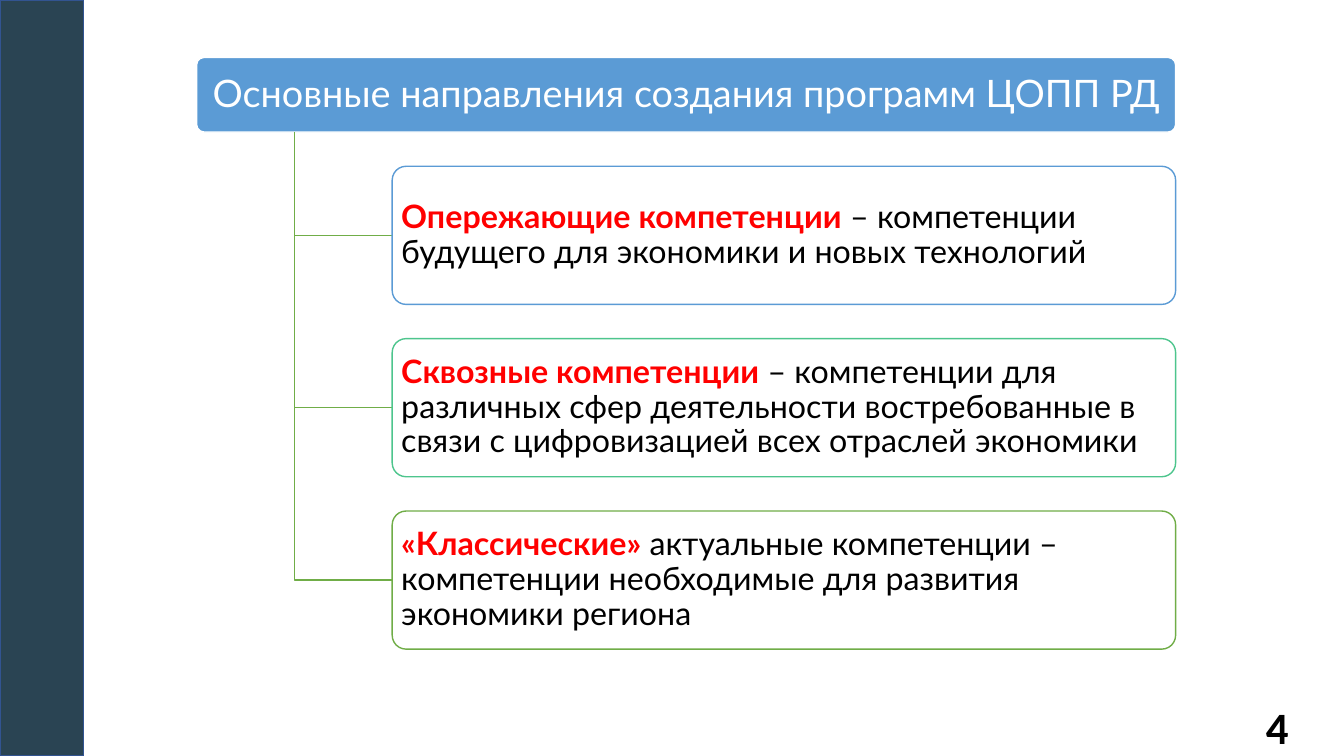
"""Build the slide on the main directions for creating training programmes."""
from dataclasses import dataclass

from lxml.etree import SubElement
from pptx import Presentation
from pptx.dml.color import RGBColor
from pptx.enum.shapes import MSO_SHAPE as Preset
from pptx.enum.text import MSO_ANCHOR as Anchor, MSO_AUTO_SIZE as AutoSize, PP_ALIGN as Align
from pptx.oxml.ns import qn
from pptx.shapes.autoshape import Shape
from pptx.slide import Slide
from pptx.text.text import TextFrame, _Paragraph as Paragraph
from pptx.util import Inches, Pt


@dataclass(frozen=True)
class Theme:
    """Colours, fonts and type sizes of the slide."""
    sidebar: str = "2A4453"
    sidebar_line: str = "325491"
    header: str = "5B9BD5"
    branch: str = "70AD47"
    accent: str = "FF0000"
    dark: str = "000000"
    light: str = "FFFFFF"
    font: str = "Lato"
    number_font: str = "Calibri"
    header_size: int = 27
    card_size: int = 23
    number_size: int = 32
    line_width: int = 1
    corner: float = 0.1
    spacing: float = 0.9


@dataclass(frozen=True)
class Box:
    """Place and size in inches."""
    left: float
    top: float
    width: float
    height: float


@dataclass(frozen=True)
class Card:
    """One direction: its highlighted term, explanation and outline colour."""
    term: str
    meaning: str
    outline: str


THEME = Theme()
HEADER = Box(1.95, 0.57, 9.71, 0.74)
FIRST_CARD = Box(3.89, 1.65, 7.77, 1.37)
CARD_STEP = 1.71
TRUNK_LEFT = 2.92
CARDS = (
    Card("Опережающие компетенции ",
         "– компетенции будущего для экономики и новых технологий", "5B9BD5"),
    Card("Сквозные компетенции ",
         "– компетенции для различных сфер деятельности востребованные "
         "в связи с цифровизацией всех отраслей экономики", "4DC58D"),
    Card("«Классические» ",
         "актуальные компетенции – компетенции необходимые для развития "
         "экономики региона", "70AD47"),
)


def add_panel(slide: Slide, preset: Preset, box: Box, fill: str, line: str) -> Shape:
    """Add a filled and outlined preset shape."""
    panel = slide.shapes.add_shape(
        preset, Inches(box.left), Inches(box.top), Inches(box.width), Inches(box.height))
    panel.shadow.inherit = False
    panel.fill.solid()
    panel.fill.fore_color.rgb = RGBColor.from_string(fill)
    panel.line.color.rgb = RGBColor.from_string(line)
    panel.line.width = Pt(THEME.line_width)
    if preset == Preset.ROUNDED_RECTANGLE:
        panel.adjustments[0] = THEME.corner
    return panel


def set_frame(frame: TextFrame, side: float, edge: float, align: Align) -> Paragraph:
    """Format a text frame and return its first paragraph."""
    frame.word_wrap = True
    frame.auto_size = AutoSize.NONE
    frame.vertical_anchor = Anchor.MIDDLE
    frame.margin_left = frame.margin_right = Inches(side)
    frame.margin_top = frame.margin_bottom = Inches(edge)
    para = frame.paragraphs[0]
    para.alignment = align
    return para


def add_span(para: Paragraph, text: str, size: int, color: str,
             bold: bool = False, font: str = THEME.font) -> None:
    """Add one formatted run."""
    span = para.add_run()
    span.text = text
    span.font.name = font
    span.font.size = Pt(size)
    span.font.bold = bold
    span.font.color.rgb = RGBColor.from_string(color)


def add_header(slide: Slide) -> None:
    """Add the header bar with the title placeholder over it."""
    add_panel(slide, Preset.ROUNDED_RECTANGLE, HEADER, THEME.header, THEME.light)
    title = slide.shapes.title
    title.left, title.top = Inches(HEADER.left + 0.02), Inches(HEADER.top + 0.02)
    title.width, title.height = Inches(HEADER.width - 0.04), Inches(HEADER.height - 0.04)
    slide.shapes.element.append(title.element)
    para = set_frame(title.text_frame, 0.06, 0.04, Align.CENTER)
    para.line_spacing = THEME.spacing
    add_span(para, "Основные направления создания программ ЦОПП РД",
             THEME.header_size, THEME.light)


def add_branch(slide: Slide, box: Box) -> None:
    """Draw the elbow from the header to the left side of a card."""
    trunk, middle = Inches(TRUNK_LEFT), Inches(box.top + box.height / 2)
    builder = slide.shapes.build_freeform(trunk, Inches(HEADER.top + HEADER.height))
    builder.add_line_segments([(trunk, middle), (Inches(box.left), middle)], close=False)
    branch = builder.convert_to_shape()
    branch.shadow.inherit = False
    branch.fill.background()
    branch.line.color.rgb = RGBColor.from_string(THEME.branch)
    branch.line.width = Pt(THEME.line_width)


def add_card(slide: Slide, card: Card, box: Box) -> None:
    """Add a card with its term and explanation."""
    panel = add_panel(slide, Preset.ROUNDED_RECTANGLE, box, THEME.light, card.outline)
    color = panel.element.spPr.find(qn("a:solidFill"))[0]
    SubElement(color, qn("a:alpha"), val="90000")
    para = set_frame(panel.text_frame, 0.05, 0.03, Align.LEFT)
    para.line_spacing = THEME.spacing
    add_span(para, card.term, THEME.card_size, THEME.accent, bold=True)
    add_span(para, card.meaning, THEME.card_size, THEME.dark)


def add_page_number(slide: Slide) -> None:
    """Add the page number in the lower right corner."""
    number = slide.shapes.add_textbox(Inches(10.08), Inches(6.91), Inches(3), Inches(0.59))
    para = set_frame(number.text_frame, 0.3, 0.05, Align.RIGHT)
    add_span(para, "4", THEME.number_size, THEME.dark, bold=True, font=THEME.number_font)


def main() -> None:
    """Build and save the deck."""
    deck = Presentation()
    deck.slide_width, deck.slide_height = Inches(13.33), Inches(7.5)
    page = deck.slides.add_slide(deck.slide_layouts.get_by_name("Title Only"))
    add_panel(page, Preset.RECTANGLE, Box(0, 0, 0.83, 7.5), THEME.sidebar, THEME.sidebar_line)
    add_header(page)
    for index, card in enumerate(CARDS):
        box = Box(FIRST_CARD.left, FIRST_CARD.top + index * CARD_STEP,
                  FIRST_CARD.width, FIRST_CARD.height)
        add_branch(page, box)
        add_card(page, card, box)
    add_page_number(page)
    deck.save("out.pptx")


if __name__ == "__main__":
    main()
